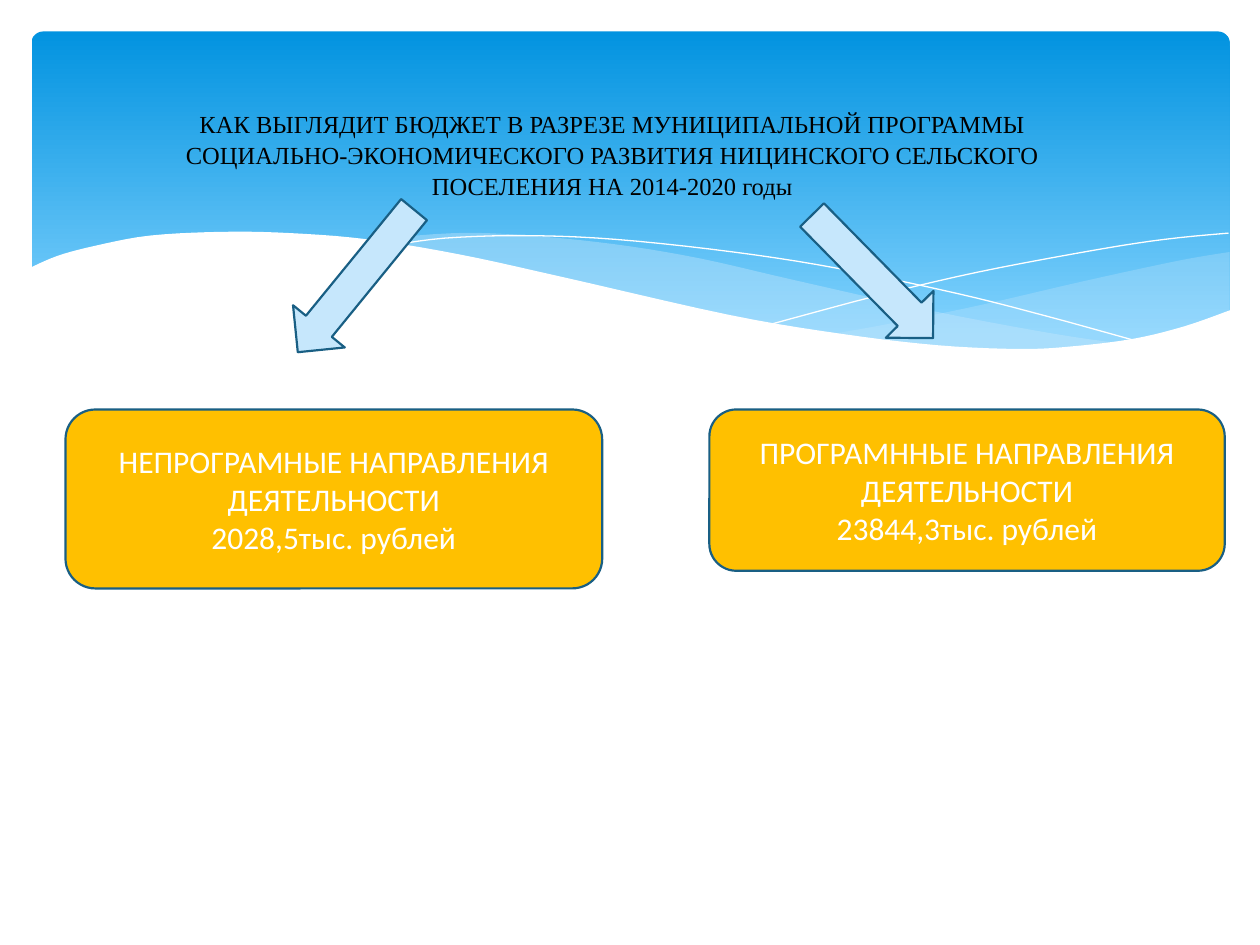
from dataclasses import dataclass
from itertools import chain

from lxml.etree import SubElement
from pptx import Presentation
from pptx.dml.color import RGBColor
from pptx.enum.shapes import MSO_SHAPE
from pptx.enum.text import MSO_ANCHOR, PP_ALIGN
from pptx.oxml.ns import qn
from pptx.util import Inches, Pt

UNIT = Inches(0.1)
COLUMNS, ROWS = 100, 75
CURVE_STEPS = 5


@dataclass(frozen=True)
class Theme:
    white: RGBColor = RGBColor(0xFF, 0xFF, 0xFF)
    black: RGBColor = RGBColor(0, 0, 0)
    sky_top: RGBColor = RGBColor(0x02, 0x93, 0xE0)
    sky_bottom: RGBColor = RGBColor(0x83, 0xD3, 0xFE)
    pale: RGBColor = RGBColor(0xC6, 0xE7, 0xFC)
    amber: RGBColor = RGBColor(0xFF, 0xC0, 0x00)
    outline: RGBColor = RGBColor(0x19, 0x5F, 0x84)
    outline_width: Pt = Pt(1.25)
    title_font: str = "Times New Roman"
    title_size: Pt = Pt(14)
    body_font: str = "Calibri"
    body_size: Pt = Pt(18)


THEME = Theme()
TITLE_FORMAT = {"name": THEME.title_font, "size": THEME.title_size}
BODY_FORMAT = {"name": THEME.body_font, "size": THEME.body_size}

RIGHT_BAND = [
    [(95.1, 17.5), (91, 18.2), (83.6, 19.8), (75.4, 21.7), (68.1, 23.2), (63.6, 24)],
    [(63.6, 24), (69.4, 24.7), (74.4, 25.2), (78.9, 25.3), (83.8, 25),
     (88.8, 24.2), (92.4, 23.2), (95.1, 22.2)],
]
MIDDLE_BAND = [
    [(86.8, 24.8), (81.2, 24), (71.6, 22.2), (60.4, 19.7), (53, 18),
     (46.4, 16.9), (39.5, 16.2), (33.6, 16), (26.1, 16.6)],
    [(26.1, 16.6), (33.7, 17.8), (42.4, 19.7), (50.5, 21.5), (59.3, 23.3),
     (67, 24.5), (73.6, 25.2), (79.3, 25.3), (86.8, 24.8)],
]
FALLING_LINE = [
    [(28.4, 17), (32.8, 16.4), (39.1, 16.2), (46.4, 16.5), (55.7, 17.5),
     (64, 18.8), (73.5, 20.8), (80.6, 22.6), (88.2, 24.7)],
]
RISING_LINE = [
    [(58.8, 23.2), (67, 21), (75.1, 19.1), (84.1, 17.4), (89.9, 16.5), (95, 16)],
]
WHITE_WAVE = [
    [(95.2, 22.1), (91.5, 23.4), (87.4, 24.4), (82.5, 25), (78.4, 25.2),
     (71.9, 24.9), (64.3, 24), (55.4, 22.5), (42.2, 19.5), (34, 17.7),
     (26.7, 16.5), (20.5, 16), (15.2, 15.9), (9.4, 16.2), (5.1, 17),
     (2.1, 17.8), (-0.2, 18.8)],
    [(-0.2, 30.4), (95.2, 30.4)],
]


def grid(*lengths):
    return [round(length * UNIT) for length in lengths]


def apply_format(target, values):
    for attribute, value in values.items():
        setattr(target, attribute, value)


def smooth_curve(knots):
    padded = [knots[0], *knots, knots[-1]]
    points = [knots[0]]
    for a, b, c, d in zip(padded, padded[1:], padded[2:], padded[3:]):
        for step in range(1, CURVE_STEPS + 1):
            t = step / CURVE_STEPS
            points.append(tuple(
                (2 * q + (r - p) * t + (2 * p - 5 * q + 4 * r - s) * t ** 2
                 + (3 * q - p - 3 * r + s) * t ** 3) / 2
                for p, q, r, s in zip(a, b, c, d)))
    return points


def add_wave(slide, box, edges, color, opacity=100, closed=True):
    left, top = box[:2]
    points = [grid(left + x, top + y)
              for x, y in chain.from_iterable(map(smooth_curve, edges))]
    builder = slide.shapes.build_freeform(*points[0])
    builder.add_line_segments(points[1:], close=closed)
    wave = builder.convert_to_shape()
    wave.shadow.inherit = False
    if not closed:
        wave.fill.background()
        wave.line.color.rgb = color
        wave.line.width = 0
        return
    wave.line.fill.background()
    wave.fill.solid()
    wave.fill.fore_color.rgb = color
    if opacity < 100:
        tint = wave.element.spPr.find(qn("a:solidFill"))[0]
        SubElement(tint, qn("a:alpha")).set("val", str(opacity * 1000))


def add_header(slide, box):
    sky = slide.shapes.add_shape(MSO_SHAPE.ROUNDED_RECTANGLE, *grid(*box))
    sky.adjustments[0] = 0.034
    sky.shadow.inherit = False
    sky.line.fill.background()
    sky.fill.gradient()
    sky.fill.gradient_angle = 270
    colors = [(0, THEME.sky_top), (0.9, THEME.sky_bottom)]
    for stop, (position, color) in zip(sky.fill.gradient_stops, colors):
        stop.position = position
        stop.color.rgb = color
    add_wave(slide, box, RIGHT_BAND, THEME.pale, opacity=29)
    add_wave(slide, box, MIDDLE_BAND, THEME.pale, opacity=40)
    for line in (FALLING_LINE, RISING_LINE):
        add_wave(slide, box, line, THEME.white, closed=False)
    add_wave(slide, box, WHITE_WAVE, THEME.white)


def write_centred(frame, lines, values, color):
    apply_format(frame, {"word_wrap": True, "vertical_anchor": MSO_ANCHOR.MIDDLE})
    frame.text = "\n".join(lines)
    for paragraph in frame.paragraphs:
        paragraph.alignment = PP_ALIGN.CENTER
        for run in paragraph.runs:
            apply_format(run.font, values)
            run.font.color.rgb = color


def place_title(slide, box, heading):
    title = slide.shapes.title
    apply_format(title, dict(zip(("left", "top", "width", "height"), grid(*box))))
    write_centred(title.text_frame, [heading], TITLE_FORMAT, THEME.black)
    title.text_frame.paragraphs[0].line_spacing = 1.05
    title.element.getparent().append(title.element)


def add_outlined(slide, preset, box, color):
    outlined = slide.shapes.add_shape(preset, *grid(*box))
    outlined.shadow.inherit = False
    outlined.fill.solid()
    outlined.fill.fore_color.rgb = color
    outlined.line.color.rgb = THEME.outline
    outlined.line.width = THEME.outline_width
    return outlined


def add_direction(slide, box, lines):
    panel = add_outlined(slide, MSO_SHAPE.ROUNDED_RECTANGLE, box, THEME.amber)
    write_centred(panel.text_frame, lines, BODY_FORMAT, THEME.white)


def add_pointer(slide, box, angle):
    add_outlined(slide, MSO_SHAPE.DOWN_ARROW, box, THEME.pale).rotation = angle


def main():
    presentation = Presentation()
    presentation.slide_width, presentation.slide_height = grid(COLUMNS, ROWS)
    slide = presentation.slides.add_slide(presentation.slide_layouts[5])
    add_header(slide, (2.5, 2.5, 95.1, 27))
    place_title(slide, (13, 2.9, 71.2, 18.6),
                "КАК ВЫГЛЯДИТ БЮДЖЕТ В РАЗРЕЗЕ МУНИЦИПАЛЬНОЙ ПРОГРАММЫ "
                "СОЦИАЛЬНО-ЭКОНОМИЧЕСКОГО РАЗВИТИЯ НИЦИНСКОГО СЕЛЬСКОГО "
                "ПОСЕЛЕНИЯ НА 2014-2020 годы")
    add_direction(slide, (5.2, 32.5, 42.6, 14.2),
                  ["НЕПРОГРАМНЫЕ НАПРАВЛЕНИЯ ДЕЯТЕЛЬНОСТИ", "2028,5тыс. рублей"])
    add_direction(slide, (56.3, 32.5, 40.9, 12.8),
                  ["ПРОГРАМННЫЕ НАПРАВЛЕНИЯ ДЕЯТЕЛЬНОСТИ", "23844,3тыс. рублей"])
    add_pointer(slide, (25.6, 15, 5.3, 14.6), 39.2)
    add_pointer(slide, (66.6, 15.1, 5.3, 13.7), 315.5)
    presentation.save("out.pptx")


if __name__ == "__main__":
    main()
